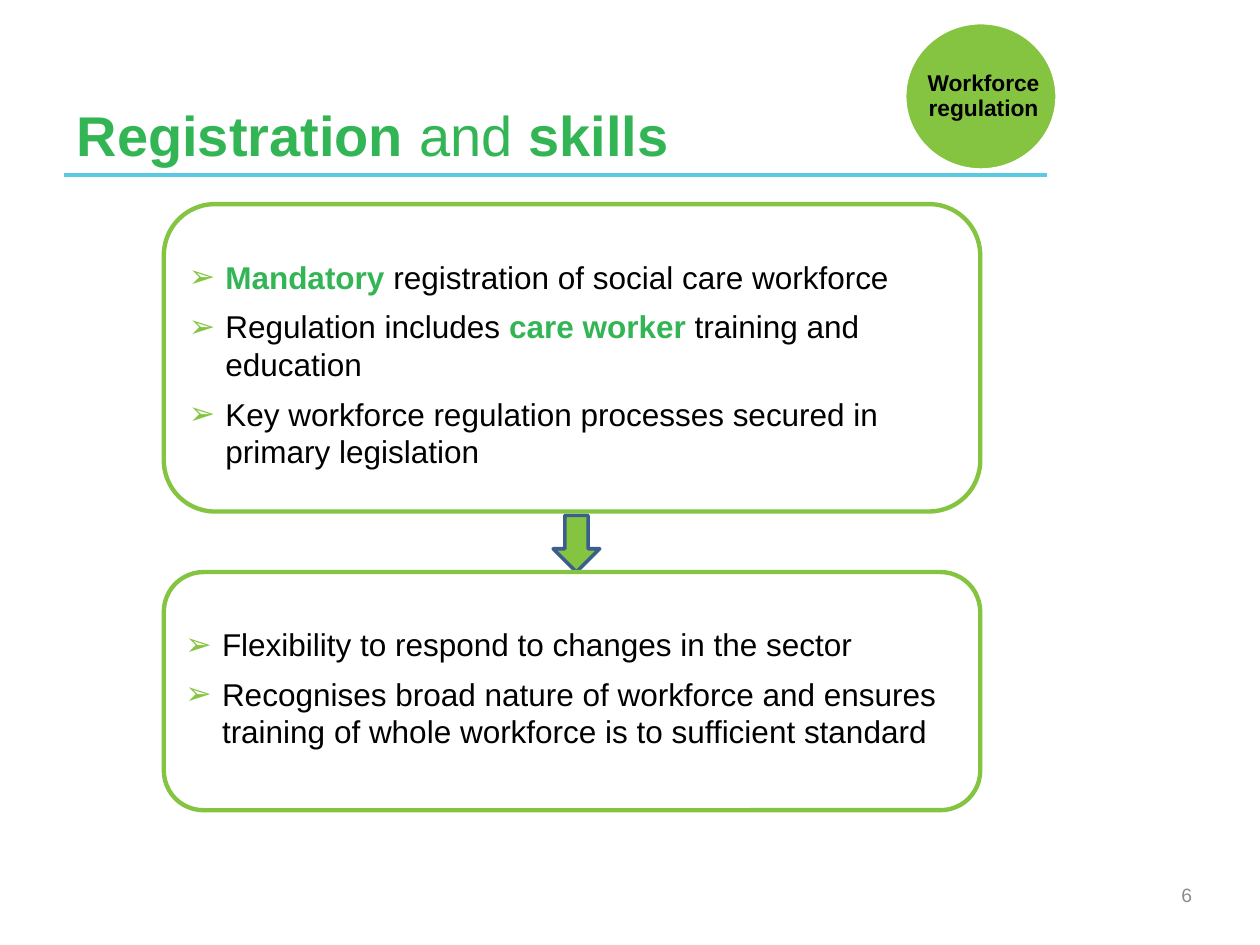
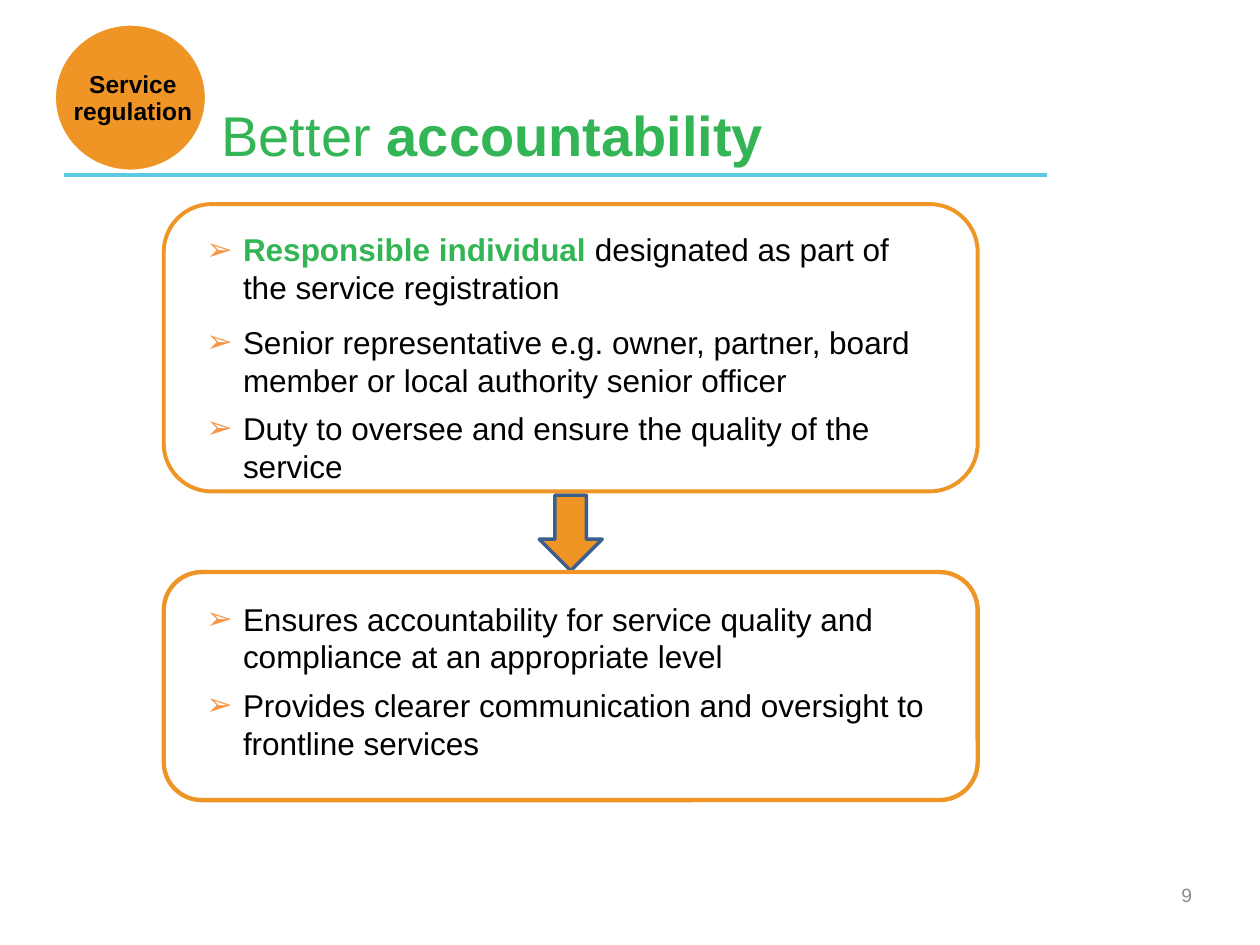
"""Build two slides on workforce registration and service accountability."""
from dataclasses import dataclass

from lxml.etree import SubElement
from pptx import Presentation
from pptx.dml.color import RGBColor
from pptx.enum.shapes import MSO_CONNECTOR, MSO_SHAPE
from pptx.enum.text import MSO_ANCHOR, PP_ALIGN
from pptx.oxml.ns import qn
from pptx.util import Inches, Pt

SLIDES = [
    {
        "title": [("Registration", True), (" and ", False), ("skills", True)],
        "title_left": 0.51,
        "number": "6",
        "accent": "85C441",
        "bullet": "85C441",
        "badge": {"text": "Workforce regulation", "at": (7.18, 0.18), "shift": (0.02, 0), "size": 13},
        "arrow": (4.39, 4.09, 0.37, 0.45),
        "space_after": 3,
        "panels": [
            {
                "at": (1.3, 1.62, 6.48, 2.44),
                "line": 2.5,
                "margins": (0.08, 0.31, 0, 0.05),
                "bullets": [
                    (0, [("Mandatory", True), (" registration of social care workforce", False)]),
                    (3.6, [("Regulation includes ", False), ("care worker ", True),
                           ("training and education", False)]),
                    (3.6, [("Key workforce regulation processes secured in primary legislation", False)]),
                ],
            },
            {
                "at": (1.3, 4.54, 6.48, 1.89),
                "line": 2.5,
                "margins": (0.08, 0.33, 0.04, 0.05),
                "bullets": [
                    (0, [("Flexibility to respond to changes in the sector", False)]),
                    (3.6, [("Recognises broad nature of workforce and ensures training of whole "
                            "workforce is to sufficient standard", False)]),
                ],
            },
        ],
    },
    {
        "title": [("Better ", False), ("accountability", True)],
        "title_left": 1.66,
        "number": "9",
        "accent": "EF9526",
        "bullet": "F79646",
        "badge": {"text": "Service regulation", "at": (0.43, 0.19), "shift": (0.02, 0.01), "size": 14},
        "arrow": (4.28, 3.93, 0.5, 0.6),
        "space_after": 6,
        "panels": [
            {
                "at": (1.3, 1.62, 6.46, 2.28),
                "line": 2.25,
                "text_at": (1.54, 1.78, 5.98, 2.15),
                "bullets": [
                    (0, [("Responsible individual ", True),
                         ("designated as part of the service registration", False)]),
                    (3.6, [("Senior representative e.g. owner, partner, board member or local "
                            "authority senior officer", False)]),
                    (0, [("Duty to oversee and ensure the quality of the service", False)]),
                ],
            },
            {
                "at": (1.3, 4.54, 6.46, 1.81),
                "line": 2.5,
                "text_at": (1.54, 4.71, 5.98, 1.4),
                "bullets": [
                    (0, [("Ensures accountability for service quality and compliance at an "
                          "appropriate level", False)]),
                    (0, [("Provides clearer communication and oversight to frontline services", False)]),
                ],
            },
        ],
    },
]


@dataclass(frozen=True)
class Theme:
    """Shared colours, type sizes and measures."""
    font: str = "Arial"
    green: str = "34B555"
    rule: str = "5CC9E3"
    text: str = "000000"
    white: str = "FFFFFF"
    grey: str = "8C8C8C"
    arrow_line: str = "3A5F8C"
    title_size: int = 32
    body_size: int = 18
    number_size: int = 11
    outline: int = 2
    left: float = 0.51
    right: float = 8.31
    rule_top: float = 1.39
    title_top: float = 0.29
    badge_size: tuple = (1.21, 1.17)
    number_at: tuple = (7.23, 6.9, 2.33, 0.4)
    indent: float = 0.29


THEME = Theme()


def rgb(value):
    return RGBColor.from_string(value)


def inches(values):
    return [Inches(value) for value in values]


def style(font, size, color, bold=None):
    font.name = THEME.font
    font.size = Pt(size)
    font.color.rgb = rgb(color)
    font.bold = bold


def set_margins(frame, margins):
    frame.margin_left, frame.margin_top, frame.margin_right, frame.margin_bottom = inches(margins)


def add_text_box(page, place, anchor=MSO_ANCHOR.TOP):
    frame = page.shapes.add_textbox(*inches(place)).text_frame
    frame.word_wrap = True
    frame.vertical_anchor = anchor
    return frame


def add_outline(page, kind, place, line, width, fill=None):
    shape = page.shapes.add_shape(kind, *inches(place))
    shape.shadow.inherit = False
    if fill:
        shape.fill.solid()
        shape.fill.fore_color.rgb = rgb(fill)
    else:
        shape.fill.background()
    shape.line.color.rgb = rgb(line)
    shape.line.width = Pt(width)
    return shape


def add_rule(page):
    start, end, top = inches((THEME.left, THEME.right, THEME.rule_top))
    rule = page.shapes.add_connector(MSO_CONNECTOR.STRAIGHT, start, top, end, top)
    rule.line.color.rgb = rgb(THEME.rule)
    rule.line.width = Pt(THEME.outline)
    SubElement(rule.element.spPr, qn("a:effectLst"))


def add_title(page, spans, left):
    place = (left, THEME.title_top, THEME.right - left, 1.09)
    para = add_text_box(page, place, MSO_ANCHOR.BOTTOM).paragraphs[0]
    style(para.font, THEME.title_size, THEME.green)
    for text, bold in spans:
        span = para.add_run()
        span.text = text
        span.font.bold = bold


def add_number(page, number):
    para = add_text_box(page, THEME.number_at, MSO_ANCHOR.MIDDLE).paragraphs[0]
    para.text = number
    para.alignment = PP_ALIGN.RIGHT
    style(para.font, THEME.number_size, THEME.grey)


def add_bullet_mark(para, color):
    properties = para._p.get_or_add_pPr()
    properties.set("marL", str(Inches(THEME.indent)))
    properties.set("indent", str(-Inches(THEME.indent)))
    SubElement(SubElement(properties, qn("a:buClr")), qn("a:srgbClr"), val=color)
    SubElement(properties, qn("a:buFont"), typeface=THEME.font)
    SubElement(properties, qn("a:buChar"), char="➢")


def write_bullets(frame, bullets, color, space_after):
    for index, (space_before, spans) in enumerate(bullets):
        para = frame.add_paragraph() if index else frame.paragraphs[0]
        para.alignment = PP_ALIGN.LEFT
        para.space_before = Pt(space_before)
        para.space_after = Pt(space_after)
        add_bullet_mark(para, color)
        style(para.font, THEME.body_size, THEME.text)
        for text, strong in spans:
            span = para.add_run()
            span.text = text
            span.font.bold = strong
            span.font.color.rgb = rgb(THEME.green if strong else THEME.text)


def add_panel(page, panel, content):
    shape = add_outline(page, MSO_SHAPE.ROUNDED_RECTANGLE, panel["at"], content["accent"], panel["line"])
    if "text_at" in panel:
        frame = add_text_box(page, panel["text_at"])
    else:
        frame = shape.text_frame
        frame.word_wrap = True
        frame.vertical_anchor = MSO_ANCHOR.TOP
        set_margins(frame, panel["margins"])
    write_bullets(frame, panel["bullets"], content["bullet"], content["space_after"])


def add_badge(page, badge, accent):
    add_outline(page, MSO_SHAPE.OVAL, badge["at"] + THEME.badge_size, THEME.white, THEME.outline, accent)
    label_at = tuple(start + shift for start, shift in zip(badge["at"], badge["shift"]))
    frame = add_text_box(page, label_at + THEME.badge_size, MSO_ANCHOR.MIDDLE)
    set_margins(frame, [0.02] * 4)
    para = frame.paragraphs[0]
    para.text = badge["text"]
    para.alignment = PP_ALIGN.CENTER
    para.line_spacing = 0.9
    style(para.font, badge["size"], THEME.text, True)


def add_page(deck, content):
    page = deck.slides.add_slide(deck.slide_layouts[6])
    add_rule(page)
    add_title(page, content["title"], content["title_left"])
    add_number(page, content["number"])
    add_outline(page, MSO_SHAPE.DOWN_ARROW, content["arrow"], THEME.arrow_line, THEME.outline,
                content["accent"])
    for panel in content["panels"]:
        add_panel(page, panel, content)
    add_badge(page, content["badge"], content["accent"])


def main():
    deck = Presentation()
    deck.slide_width, deck.slide_height = inches((10, 7.5))
    for content in SLIDES:
        add_page(deck, content)
    deck.save("out.pptx")


if __name__ == "__main__":
    main()
